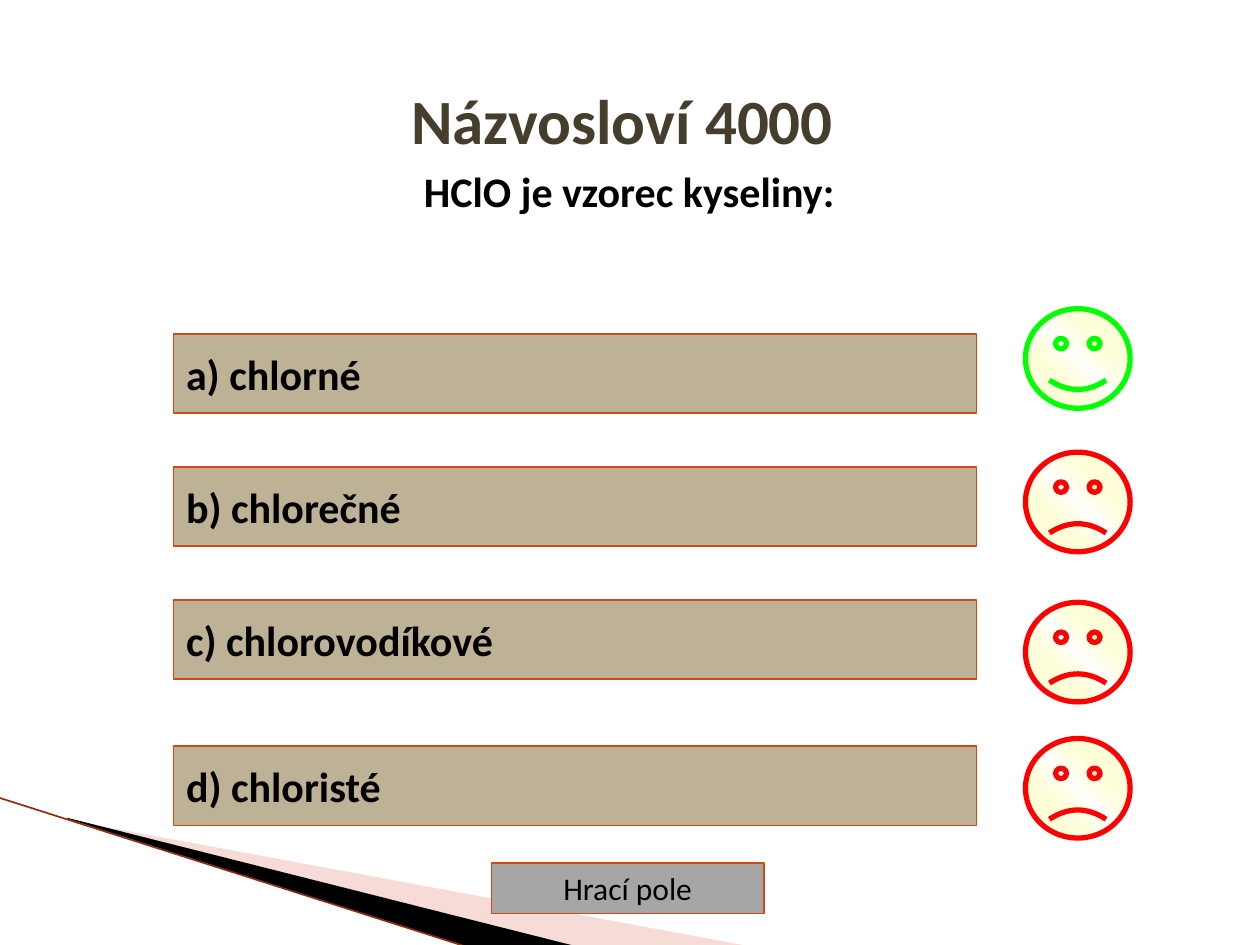
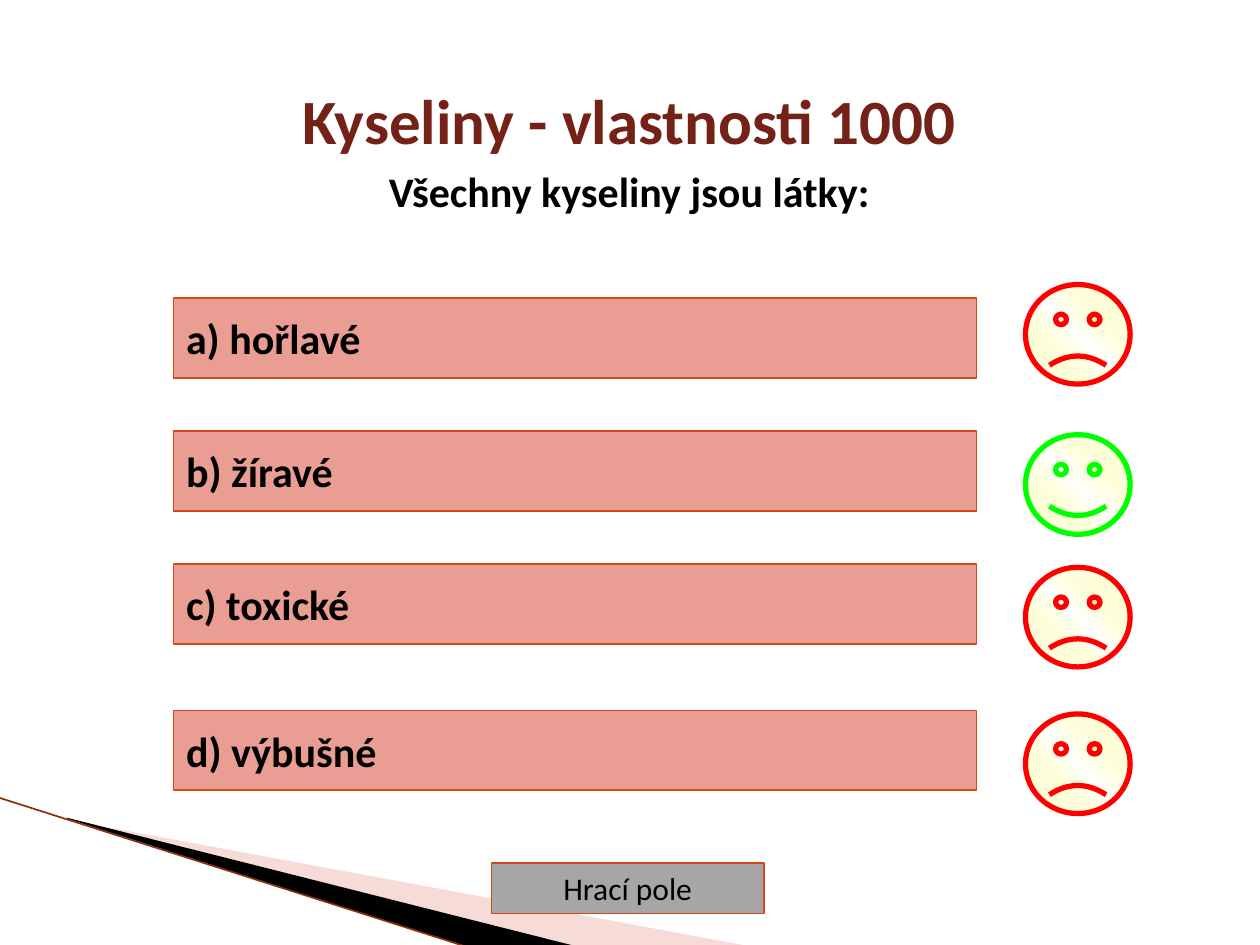
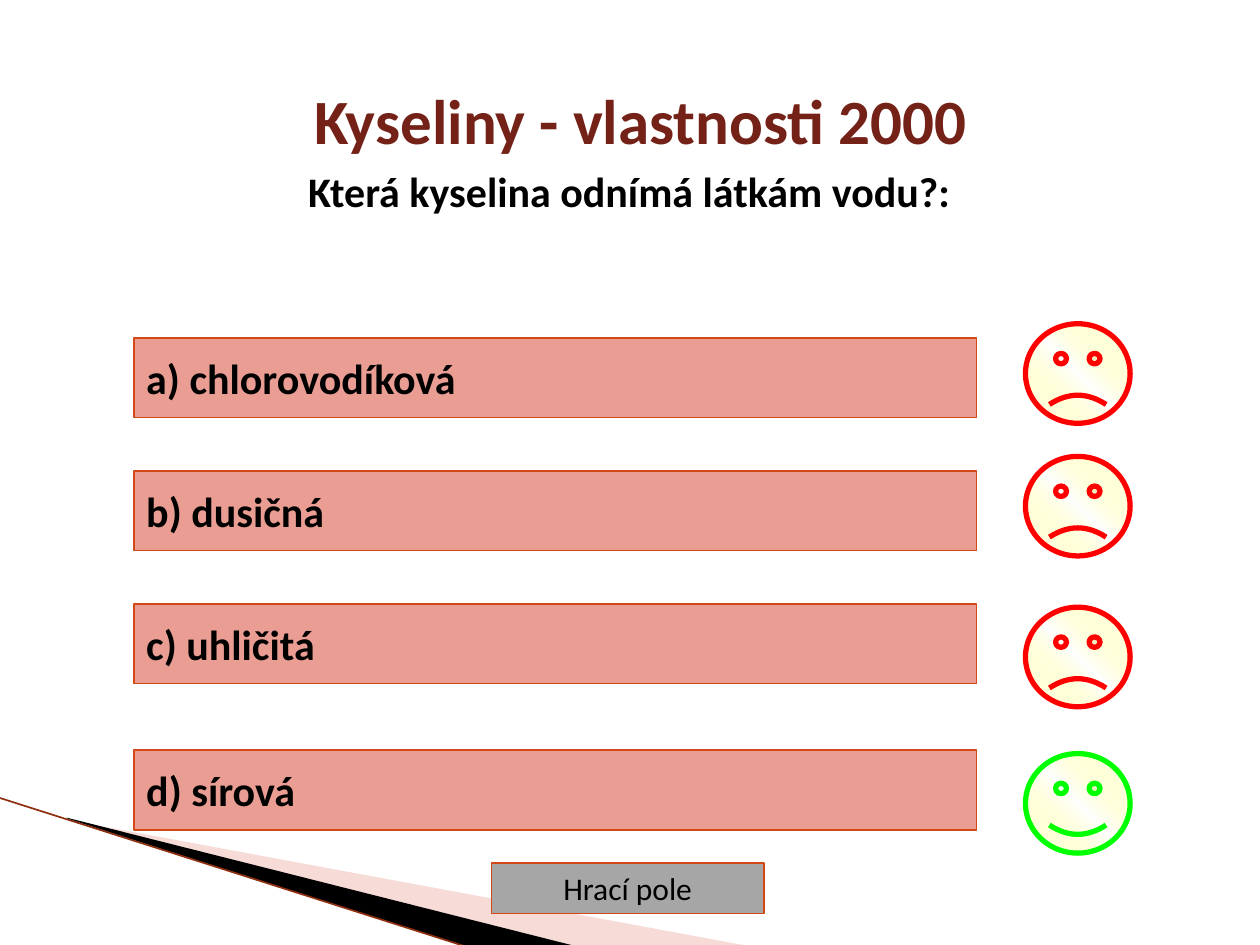
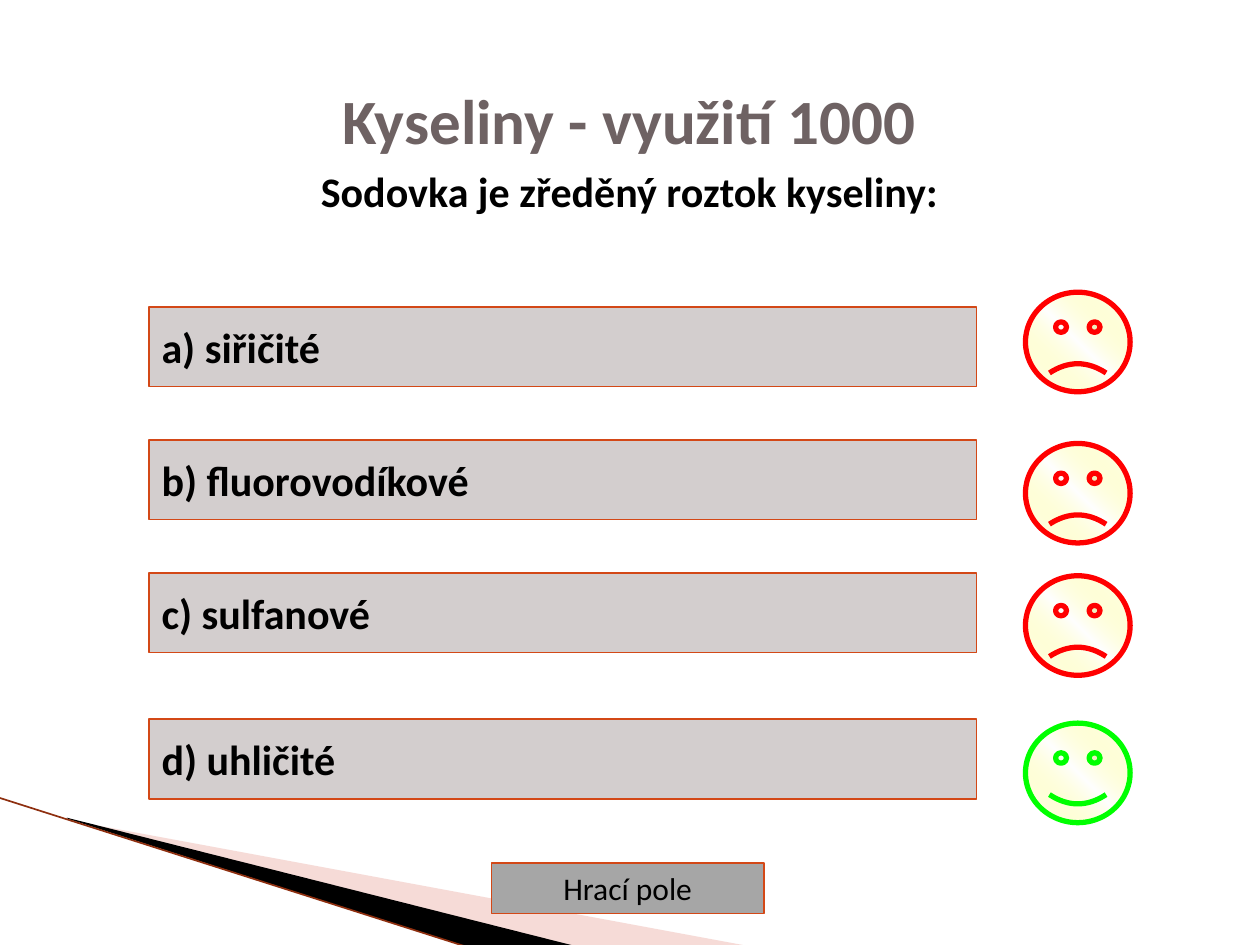
import dataclasses

import pptx
import pptx.dml.color
import pptx.enum.shapes
import pptx.enum.text
import pptx.oxml
import pptx.oxml.ns
import pptx.util

Pt = pptx.util.Pt
SHAPES = pptx.enum.shapes.MSO_SHAPE
ALIGN = pptx.enum.text.PP_ALIGN
ANCHOR = pptx.enum.text.MSO_ANCHOR

FONT = "Calibri"
BLACK = "000000"
BORDER = "D34817"
BUTTON_GRAY = "A6A6A6"
WEDGE_PINK = "E9A59D"
EDGE_BROWN = "8E2F0F"
RIGHT_GREEN = "00FF00"
WRONG_RED = "FF0000"

TITLE_CENTER = 359.6
ANSWER_RIGHT = 558
ANSWER_HEIGHT = 45.4
ANSWER_OFFSETS = (0, 76, 152, 235.6)
FACE_LEFT = 586

FACE_FILL = (
    '<a:gradFill xmlns:a="http://schemas.openxmlformats.org/drawingml/2006/main">'
    '<a:gsLst><a:gs pos="0"><a:srgbClr val="FFFFFF"/></a:gs>'
    '<a:gs pos="50000"><a:srgbClr val="FFFF66"><a:alpha val="0"/></a:srgbClr></a:gs>'
    '<a:gs pos="100000"><a:srgbClr val="FFFFFF"/></a:gs></a:gsLst>'
    '<a:lin ang="18900000" scaled="1"/></a:gradFill>'
)


@dataclasses.dataclass
class Question:
    title: str
    text: str
    answers: tuple
    correct: int
    title_color: str
    answer_color: str
    answer_left: float
    answer_top: float
    face_tops: tuple
    title_left: float = 28
    title_lead: str = ""


QUESTIONS = (
    Question("Názvosloví 4000 ", "HClO je vzorec kyseliny:",
             ("a) chlorné", "b) chlorečné", "c) chlorovodíkové", "d) chloristé"),
             0, "463E2C", "BDB196", 99.2, 190.8, (176.4, 258.4, 344.2, 422),
             title_left=19.4),
    Question("Kyseliny - vlastnosti 1000", "Všechny kyseliny jsou látky:",
             ("a) hořlavé", "b) žíravé", "c) toxické", "d) výbušné"),
             1, "742217", "E99D93", 99.2, 170.5, (162.6, 248.4, 324.2, 408)),
    Question("Kyseliny - vlastnosti 2000", "Která kyselina odnímá látkám vodu?:",
             ("a) chlorovodíková", "b) dusičná", "c) uhličitá", "d) sírová"),
             3, "742217", "E99D93", 76.5, 193.2, (185, 260.8, 347, 430.6),
             title_lead=" "),
    Question("Kyseliny - využití 1000", "Sodovka je zředěný roztok kyseliny:",
             ("a) siřičité", "b) fluorovodíkové", "c) sulfanové", "d) uhličité"),
             3, "6E6263", "D3CECE", 85.2, 175.4, (167, 253.4, 329, 413.2)),
)


def rgb(color):
    return pptx.dml.color.RGBColor.from_string(color)


def add_text(paragraph, text, size=24, color=BLACK, bold=True, font=FONT, align=ALIGN.LEFT):
    paragraph.alignment = align
    run = paragraph.add_run()
    run.text = text
    run.font.name = font
    run.font.size = Pt(size)
    run.font.bold = bold
    run.font.color.rgb = rgb(color)


def set_fill(shape, color):
    shape.fill.solid()
    shape.fill.fore_color.rgb = rgb(color)


def set_line(shape, color, width):
    shape.line.color.rgb = rgb(color)
    shape.line.width = Pt(width)


def add_wedge(slide, points, color, opacity=100):
    corners = [(Pt(x), Pt(y)) for x, y in points]
    builder = slide.shapes.build_freeform(*corners[0])
    builder.add_line_segments(corners[1:], close=True)
    wedge = builder.convert_to_shape()
    wedge.shadow.inherit = False
    set_fill(wedge, color)
    wedge.line.fill.background()
    if opacity < 100:
        color_element = wedge.element.spPr.find(".//" + pptx.oxml.ns.qn("a:srgbClr"))
        alpha = color_element.makeelement(
            pptx.oxml.ns.qn("a:alpha"), {"val": str(opacity * 1000)})
        color_element.append(alpha)
    return wedge


def add_edge(slide):
    edge = slide.shapes.add_connector(
        pptx.enum.shapes.MSO_CONNECTOR.STRAIGHT, Pt(-0.7), Pt(455.8), Pt(267.8), Pt(541.4))
    set_line(edge, EDGE_BROWN, 0.95)
    properties = edge.element.spPr
    properties.append(properties.makeelement(pptx.oxml.ns.qn("a:effectLst"), {}))
    return edge


def move_corner_to_layout(slide, layout):
    for placeholder in list(layout.placeholders):
        if placeholder.placeholder_format.idx != 0:
            layout.shapes.element.remove(placeholder.element)
    corner = (
        add_wedge(slide, [(39.6, 468.7), (428.4, 540.7), (328.3, 540.7), (39.6, 468)],
                  WEDGE_PINK, opacity=40),
        add_wedge(slide, [(38.2, 467.3), (329, 540.7), (267.8, 541.4), (38.9, 468)], BLACK),
        add_edge(slide),
    )
    for shape in corner:
        layout.shapes.element.append(shape.element)


def add_title(slide, question):
    title = slide.shapes.title
    title.left, title.top = Pt(question.title_left), Pt(43.2)
    title.width, title.height = Pt(2 * (TITLE_CENTER - question.title_left)), Pt(55)
    frame = title.text_frame
    frame.auto_size = pptx.enum.text.MSO_AUTO_SIZE.NONE
    frame.vertical_anchor = ANCHOR.TOP
    frame.word_wrap = True
    heading = frame.paragraphs[0]
    if question.title_lead:
        add_text(heading, question.title_lead, size=36, color="FF6600", font="Comic Neue")
    add_text(heading, question.title, size=36, color=question.title_color, align=ALIGN.CENTER)
    prompt = frame.add_paragraph()
    prompt.space_before = Pt(4.8)
    add_text(prompt, question.text, align=ALIGN.CENTER)
    for paragraph in frame.paragraphs:
        properties = paragraph._p.get_or_add_pPr()
        properties.set("marL", str(Pt(27)))
        properties.set("indent", str(Pt(-27)))


def add_button(slide, text, left, top, width, height, fill, border_width=1, **text_format):
    button = slide.shapes.add_shape(
        SHAPES.ACTION_BUTTON_CUSTOM, Pt(left), Pt(top), Pt(width), Pt(height))
    button.shadow.inherit = False
    set_fill(button, fill)
    set_line(button, BORDER, border_width)
    frame = button.text_frame
    frame.word_wrap = False
    frame.vertical_anchor = ANCHOR.MIDDLE
    add_text(frame.paragraphs[0], text, **text_format)


def add_face(slide, top, is_correct):
    face = slide.shapes.add_shape(
        SHAPES.SMILEY_FACE, Pt(FACE_LEFT), Pt(top), Pt(59.8), Pt(56.9))
    face.shadow.inherit = False
    face.adjustments[0] = 0.047 if is_correct else -0.047
    set_line(face, RIGHT_GREEN if is_correct else WRONG_RED, 3)
    geometry = face.element.spPr.find(pptx.oxml.ns.qn("a:prstGeom"))
    geometry.addnext(pptx.oxml.parse_xml(FACE_FILL))


def add_question(slide, question):
    add_button(slide, "Hrací pole", 280.8, 493.2, 155.8, 28.8, BUTTON_GRAY,
               border_width=0.75, size=18, bold=False, align=ALIGN.CENTER)
    add_title(slide, question)
    rows = zip(question.answers, ANSWER_OFFSETS, question.face_tops)
    for index, (answer, offset, face_top) in enumerate(rows):
        add_button(slide, answer, question.answer_left, question.answer_top + offset,
                   ANSWER_RIGHT - question.answer_left, ANSWER_HEIGHT, question.answer_color)
        add_face(slide, face_top, index == question.correct)


def main():
    presentation = pptx.Presentation()
    presentation.slide_width, presentation.slide_height = Pt(720), Pt(540)
    layout = presentation.slide_layouts.get_by_name("Title Only")
    slides = [presentation.slides.add_slide(layout) for question in QUESTIONS]
    move_corner_to_layout(slides[0], layout)
    for slide, question in zip(slides, QUESTIONS):
        add_question(slide, question)
    presentation.save("out.pptx")


if __name__ == "__main__":
    main()
